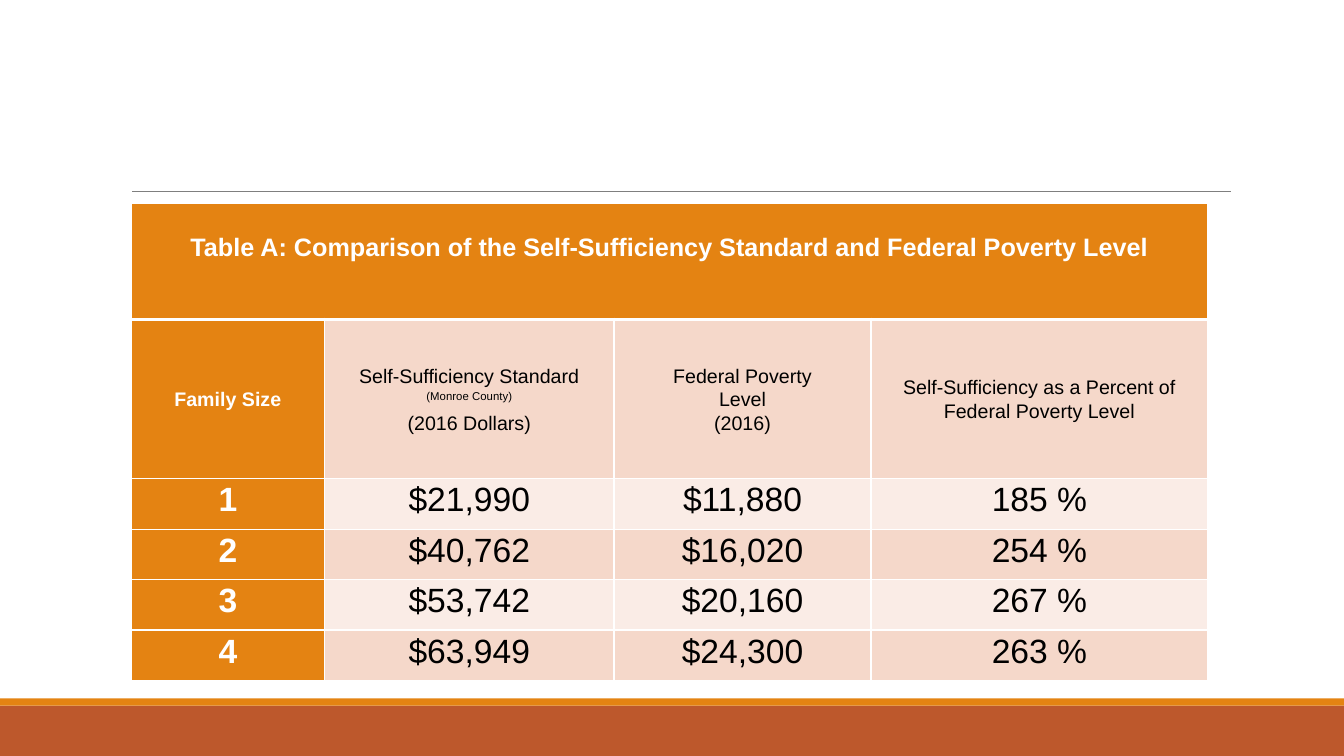
"""Build the slide comparing the Self-Sufficiency Standard with the Federal Poverty Level."""
import pptx
import pptx.dml.color
import pptx.enum.shapes
import pptx.enum.text
import pptx.oxml
import pptx.oxml.ns
import pptx.util
from pptx.util import Inches

COLORS = {"orange": "E48312", "rust": "BD582C", "rule": "7F7F7F", "white": "FFFFFF",
          "black": "000000", "peach": "F5D8CA", "pale": "FAECE6"}
TITLE = "Table A: Comparison of the Self-Sufficiency Standard and Federal Poverty Level"
ROWS = [
    [TITLE, "", "", ""],
    ["Family Size",
     "Self-Sufficiency Standard\n(Monroe County)\n(2016 Dollars)",
     "Federal Poverty\nLevel\n(2016)",
     "Self-Sufficiency as a Percent of Federal Poverty Level"],
    ["1", "$21,990", "$11,880", "185 %"],
    ["2", "$40,762", "$16,020", "254 %"],
    ["3", "$53,742", "$20,160", "267 %"],
    ["4", "$63,949", "$24,300", "263 %"],
]
COL_WIDTHS = [1.92, 2.87, 2.55, 3.34]
ROW_HEIGHTS = [1.15, 1.58] + [0.5] * 4
SIZES = [18, 14] + [24] * 4


def rgb(name):
    return pptx.dml.color.RGBColor.from_string(COLORS[name])


def add_border(cell, side, width):
    cell._tc.get_or_add_tcPr().append(pptx.oxml.parse_xml(
        f'<a:ln{side} {pptx.oxml.ns.nsdecls("a")} w="{pptx.util.Pt(width)}">'
        f'<a:solidFill><a:srgbClr val="{COLORS["white"]}"/></a:solidFill></a:ln{side}>'))


prs = pptx.Presentation()
prs.slide_width, prs.slide_height = Inches(13.33), Inches(7.5)
s = prs.slides.add_slide(prs.slide_layouts[6])

for top, height, color in [(7, 0.5, "rust"), (6.93, 0.07, "orange")]:
    sp = s.shapes.add_shape(pptx.enum.shapes.MSO_SHAPE.RECTANGLE,
                            0, Inches(top), prs.slide_width, Inches(height))
    sp.shadow.inherit = False
    sp.fill.solid()
    sp.fill.fore_color.rgb = rgb(color)
    sp.line.fill.background()

rule = s.shapes.add_connector(pptx.enum.shapes.MSO_CONNECTOR.STRAIGHT,
                              Inches(1.31), Inches(1.9), Inches(12.21), Inches(1.9))
rule.line.color.rgb = rgb("rule")
rule.line.width = pptx.util.Pt(0.75)
rule._element.spPr.append(pptx.oxml.parse_xml(f'<a:effectLst {pptx.oxml.ns.nsdecls("a")}/>'))

table = s.shapes.add_table(len(ROWS), len(COL_WIDTHS), Inches(1.3), Inches(2.02),
                           Inches(sum(COL_WIDTHS)), Inches(sum(ROW_HEIGHTS))).table
for col, width in zip(table.columns, COL_WIDTHS):
    col.width = Inches(width)
for row, height in zip(table.rows, ROW_HEIGHTS):
    row.height = Inches(height)
table.cell(0, 0).merge(table.cell(0, 3))

for i, texts in enumerate(ROWS):
    for j, text in enumerate(texts):
        cell = table.cell(i, j)
        heading = i == 0 or j == 0
        for side in "LRTB":
            add_border(cell, side, 3 if (i, side) in [(0, "B"), (1, "T")] else 1)
        cell.fill.solid()
        cell.fill.fore_color.rgb = rgb("orange" if heading else "peach" if i % 2 else "pale")
        cell.margin_left = cell.margin_right = Inches(0.07)
        cell.margin_top = Inches(0.28 if i == 0 else 0)
        cell.margin_bottom = 0
        cell.vertical_anchor = (pptx.enum.text.MSO_ANCHOR.MIDDLE if i == 1
                                else pptx.enum.text.MSO_ANCHOR.TOP)
        cell.text_frame.text = text
        for p in cell.text_frame.paragraphs:
            p.alignment = pptx.enum.text.PP_ALIGN.CENTER
            p.line_spacing = 1.07
            for r in p.runs:
                r.font.name = "Arial"
                r.font.size = pptx.util.Pt(SIZES[i])
                r.font.bold = heading
                r.font.color.rgb = rgb("white" if heading else "black")
                if r.text == "(Monroe County)":
                    r._r.get_or_add_rPr().set("baseline", "30000")

prs.save("out.pptx")
